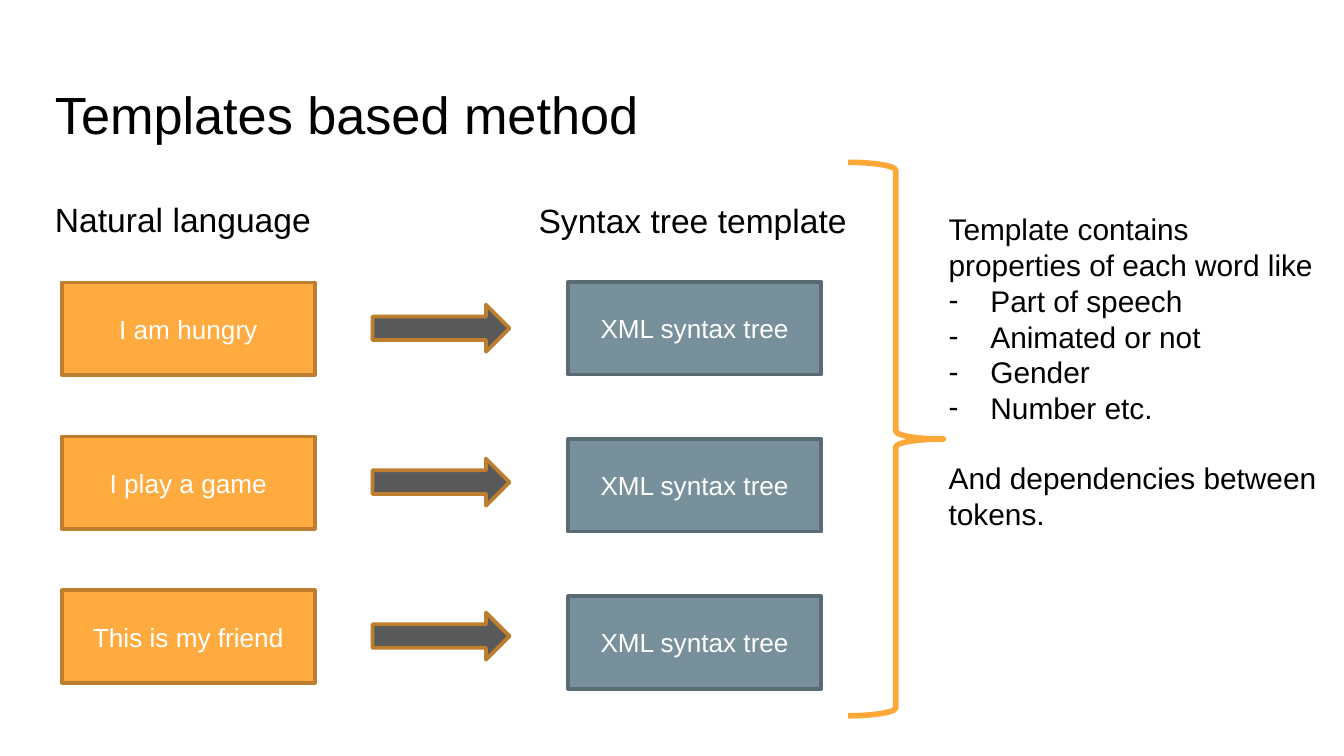
from lxml import etree
from pptx import Presentation
from pptx import util as u
from pptx.dml.color import RGBColor
from pptx.enum import shapes, text
from pptx.oxml.ns import qn

FONT = "Arial"
BLACK, WHITE = "000000", "FFFFFF"
ORANGE, ORANGE_EDGE = "FFAB40", "BD7F2F"
SLATE, SLATE_EDGE = "78909C", "596B73"
ARROW_FILL, BRACE = "595959", "FEA83A"
SHAPE = shapes.MSO_SHAPE


def color(hex_string):
    return RGBColor.from_string(hex_string)


def add_run(p, words, size, hex_string=BLACK):
    r = p.add_run()
    r.text = words
    r.font.name, r.font.size = FONT, u.Pt(size)
    r.font.color.rgb = color(hex_string)


def add_textbox(s, box, wrap=False):
    tf = s.shapes.add_textbox(*map(u.Cm, box)).text_frame
    tf.word_wrap = wrap
    return tf


def add_preset(s, kind, box, fill, edge, width=2):
    sp = s.shapes.add_shape(kind, *map(u.Cm, box))
    sp.shadow.inherit = False
    if fill:
        sp.fill.solid()
        sp.fill.fore_color.rgb = color(fill)
    else:
        sp.fill.background()
    sp.line.color.rgb = color(edge)
    sp.line.width = u.Pt(width)
    return sp


def add_title(s, box, words):
    tf = add_textbox(s, box, wrap=True)
    tf.margin_top, tf.margin_bottom = u.Cm(0.38), 0
    add_run(tf.paragraphs[0], words, 28)


def add_heading(s, box, words):
    add_run(add_textbox(s, box).paragraphs[0], words, 18)


def add_column(s, box, pitch, kind, labels, fill, edge):
    """Stack one shape per label downwards; box is the first one's box."""
    left, top, width, height = box
    for i, label in enumerate(labels):
        sp = add_preset(s, kind, (left, top + i * pitch, width, height), fill, edge)
        if label:
            tf = sp.text_frame
            tf.vertical_anchor = text.MSO_ANCHOR.MIDDLE
            p = tf.paragraphs[0]
            p.alignment = text.PP_ALIGN.CENTER
            add_run(p, label, 14, WHITE)


def set_dash_bullet(p):
    indent = u.Cm(0.79)
    pPr = p._p.get_or_add_pPr()
    pPr.set("marL", str(indent))
    pPr.set("indent", str(-indent))
    etree.SubElement(pPr, qn("a:buFont")).set("typeface", FONT)
    etree.SubElement(pPr, qn("a:buChar")).set("char", "-")


def add_notes_column(s, box, intro, bullets, closing):
    tf = add_textbox(s, box)
    for i, line in enumerate(intro + bullets + closing):
        p = tf.paragraphs[0] if i == 0 else tf.add_paragraph()
        if line in bullets:
            set_dash_bullet(p)
        elif line == closing[0]:
            p.space_before = u.Pt(18.4)
        add_run(p, line, 16)


def main():
    prs = Presentation()
    prs.slide_width, prs.slide_height = u.Cm(25.4), u.Cm(14.29)
    s = prs.slides.add_slide(prs.slide_layouts[6])

    add_title(s, (0.79, 1.17, 23.67, 1.6), "Templates based method")

    sentences = ["I am hungry", "I play a game", "This is my friend"]
    trees = ["XML syntax tree"] * len(sentences)
    add_column(s, (1.17, 5.34, 4.78, 1.75), 2.91, SHAPE.RECTANGLE,
               sentences, ORANGE, ORANGE_EDGE)
    add_column(s, (7.04, 5.76, 2.59, 0.89), 2.91, SHAPE.RIGHT_ARROW,
               [""] * len(sentences), ARROW_FILL, ORANGE_EDGE)
    add_column(s, (10.74, 5.33, 4.78, 1.75), 2.97, SHAPE.RECTANGLE,
               trees, SLATE, SLATE_EDGE)

    add_heading(s, (0.79, 3.63, 5.56, 1.02), "Natural language")
    add_heading(s, (9.93, 3.66, 6.4, 1.02), "Syntax tree template")

    add_preset(s, SHAPE.RIGHT_BRACE, (16.03, 3.07, 1.8, 10.46), None, BRACE, 3)
    add_notes_column(
        s, (17.68, 3.86, 7.54, 6.4),
        ["Template contains", "properties of each word like"],
        ["Part of speech", "Animated or not", "Gender", "Number etc."],
        ["And dependencies between", "tokens."])

    prs.save("out.pptx")


if __name__ == "__main__":
    main()
